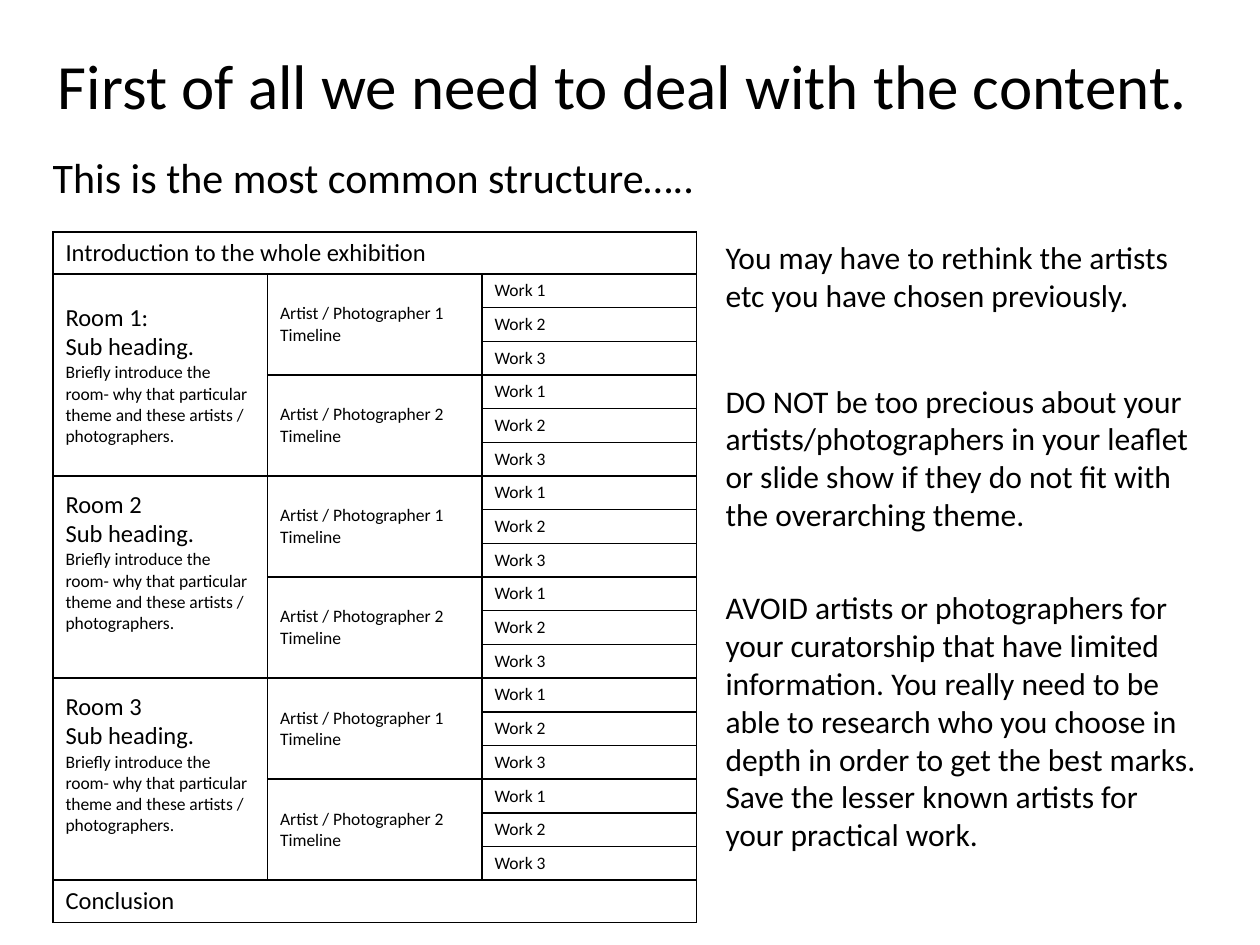
from lxml import etree
from pptx import Presentation
from pptx.dml.color import RGBColor
from pptx.enum import text
from pptx.oxml.ns import qn
from pptx.util import Inches, Pt

THEME = {
    "font": "Calibri", "ink": "000000", "paper": "FFFFFF", "border": 1,
    "title": 36, "subtitle": 24, "advice": 18, "heading": 14, "detail": 10,
}

TITLE = ("First of all we need to deal with the content.", (0.36, 0.32, 9.25, 0.71))
SUBTITLE = ("This is the most common structure…..", (0.32, 1.15, 5.34, 0.5))
ADVICE = [
    ("You may have to rethink the artists etc you have chosen previously.", 1.84, 0.71),
    ("DO NOT be too precious about your artists/photographers in your leaflet "
     "or slide show if they do not fit with the overarching theme.", 2.98, 1.31),
    ("AVOID artists or photographers for your curatorship that have limited "
     "information. You really need to be able to research who you choose in depth "
     "in order to get the best marks. Save the lesser known artists for your "
     "practical work.", 4.62, 2.22),
]
ADVICE_LEFT, ADVICE_WIDTH = 5.66, 3.95

INTRODUCTION, CONCLUSION = "Introduction to the whole exhibition", "Conclusion"
# Room name and the bottom margin that lifts its text
ROOMS = [("Room 1:", 0.05), ("Room 2", 0.29), ("Room 3", 0.29)]
SUB_HEADING = "Sub heading."
ROOM_BRIEF = ("Briefly introduce the room- why that particular theme "
              "and these artists / photographers.")
ARTISTS = ["Artist / Photographer 1", "Artist / Photographer 2"]
TIMELINE = "Timeline"
WORKS = ["Work 1", "Work 2", "Work 3"]

TABLE_BOX = (0.42, 1.84, 5.11, 5.47)
COLUMNS = 3
BANNER_HEIGHT = 0.33
ROOM_ROWS = len(ARTISTS) * len(WORKS)
ROWS = len(ROOMS) * ROOM_ROWS + 2


def write(frame, lines):
    """Fill a text frame with one paragraph per (words, theme size) pair."""
    for index, (words, size) in enumerate(lines):
        para = frame.add_paragraph() if index else frame.paragraphs[0]
        para.alignment = text.PP_ALIGN.LEFT
        span = para.add_run()
        span.text = words
        formats = {"name": THEME["font"], "size": Pt(THEME[size])}
        for name, value in formats.items():
            setattr(span.font, name, value)
        span.font.color.rgb = RGBColor.from_string(THEME["ink"])


def fill_box(box, words, size, place, wrap):
    box.left, box.top, box.width, box.height = map(Inches, place)
    formats = {
        "word_wrap": wrap,
        "auto_size": text.MSO_AUTO_SIZE.SHAPE_TO_FIT_TEXT,
        "vertical_anchor": text.MSO_ANCHOR.TOP,
    }
    for name, value in formats.items():
        setattr(box.text_frame, name, value)
    write(box.text_frame, [(words, size)])


def add_borders(cell):
    properties = cell._tc.get_or_add_tcPr()
    for position, side in enumerate(("a:lnL", "a:lnR", "a:lnT", "a:lnB")):
        line = etree.Element(qn(side), w=str(Pt(THEME["border"])))
        fill = etree.SubElement(line, qn("a:solidFill"))
        etree.SubElement(fill, qn("a:srgbClr"), val=THEME["ink"])
        properties.insert(position, line)


def fill_cell(table, row, column, lines, rows=1, columns=1, bottom=0.05):
    cell = table.cell(row, column)
    if rows > 1 or columns > 1:
        cell.merge(table.cell(row + rows - 1, column + columns - 1))
    if rows > 1:
        cell.vertical_anchor = text.MSO_ANCHOR.MIDDLE
    cell.margin_bottom = Inches(bottom)
    write(cell.text_frame, lines)


def add_structure(page):
    left, top, width, height = TABLE_BOX
    table = page.shapes.add_table(ROWS, COLUMNS, *map(Inches, TABLE_BOX)).table
    table.first_row = table.horz_banding = False
    for column in table.columns:
        column.width = Inches(width / COLUMNS)
    work_height = (height - 2 * BANNER_HEIGHT) / (ROWS - 2)
    for index, row in enumerate(table.rows):
        banner = index in (0, ROWS - 1)
        row.height = Inches(BANNER_HEIGHT if banner else work_height)
    for cell in table.iter_cells():
        cell.fill.background()
        add_borders(cell)

    for row, words in ((0, INTRODUCTION), (ROWS - 1, CONCLUSION)):
        fill_cell(table, row, 0, [(words, "heading")], columns=COLUMNS)
    for room_index, (room, bottom) in enumerate(ROOMS):
        room_row = 1 + room_index * ROOM_ROWS
        lines = [(room, "heading"), (SUB_HEADING, "heading"), (ROOM_BRIEF, "detail")]
        fill_cell(table, room_row, 0, lines, rows=ROOM_ROWS, bottom=bottom)
        for artist_index, artist in enumerate(ARTISTS):
            artist_row = room_row + artist_index * len(WORKS)
            lines = [(artist, "detail"), (TIMELINE, "detail")]
            fill_cell(table, artist_row, 1, lines, rows=len(WORKS))
            for work_index, work in enumerate(WORKS):
                fill_cell(table, artist_row + work_index, 2, [(work, "detail")])


def main():
    deck = Presentation()
    deck.slide_width, deck.slide_height = Inches(10), Inches(7.5)
    page = deck.slides.add_slide(deck.slide_layouts[5])
    page.background.fill.solid()
    page.background.fill.fore_color.rgb = RGBColor.from_string(THEME["paper"])

    words, place = TITLE
    fill_box(page.shapes.title, words, "title", place, wrap=False)
    words, place = SUBTITLE
    box = page.shapes.add_textbox(*map(Inches, place))
    fill_box(box, words, "subtitle", place, wrap=False)
    add_structure(page)
    for words, top, height in ADVICE:
        place = (ADVICE_LEFT, top, ADVICE_WIDTH, height)
        box = page.shapes.add_textbox(*map(Inches, place))
        fill_box(box, words, "advice", place, wrap=True)
    deck.save("out.pptx")


if __name__ == "__main__":
    main()
